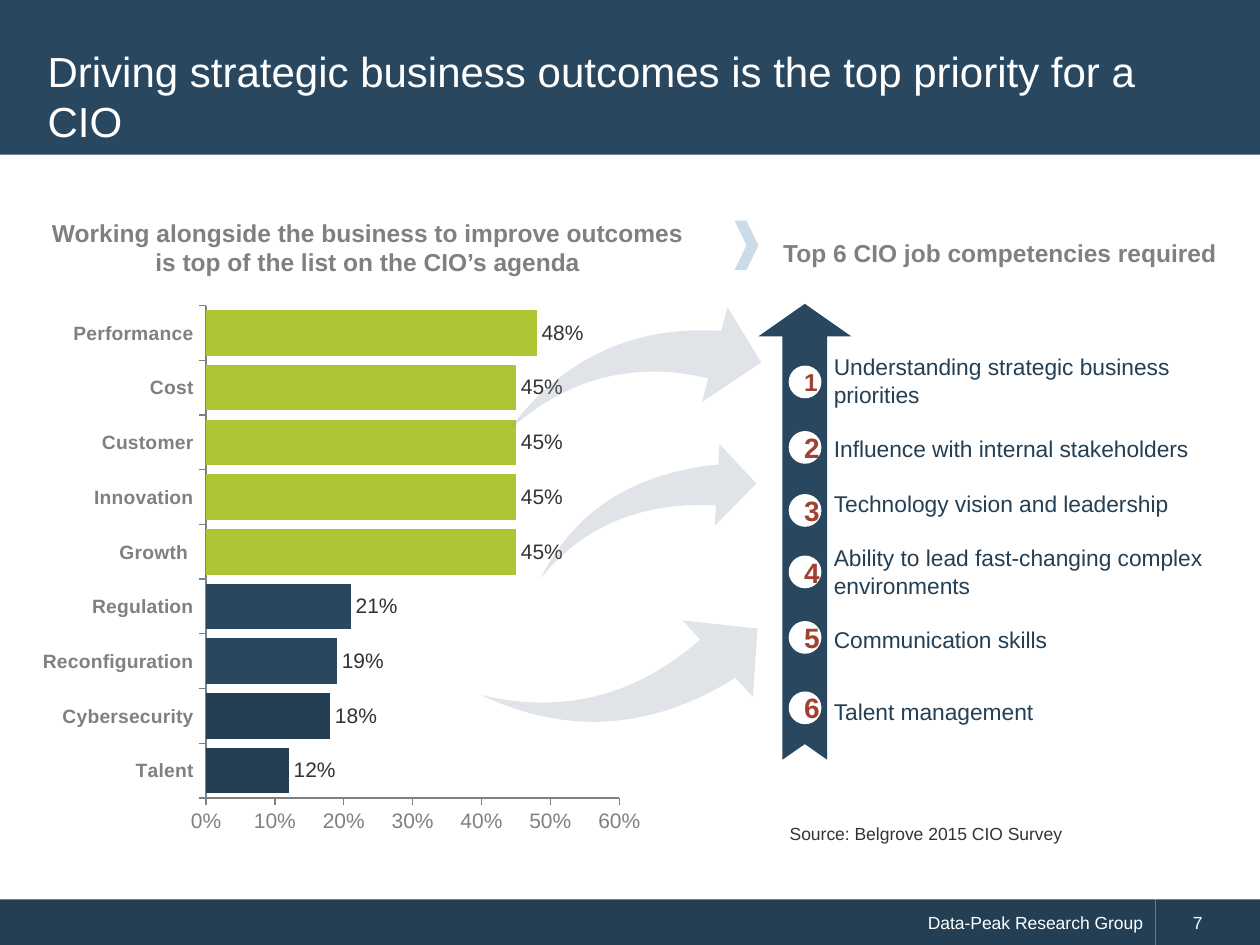
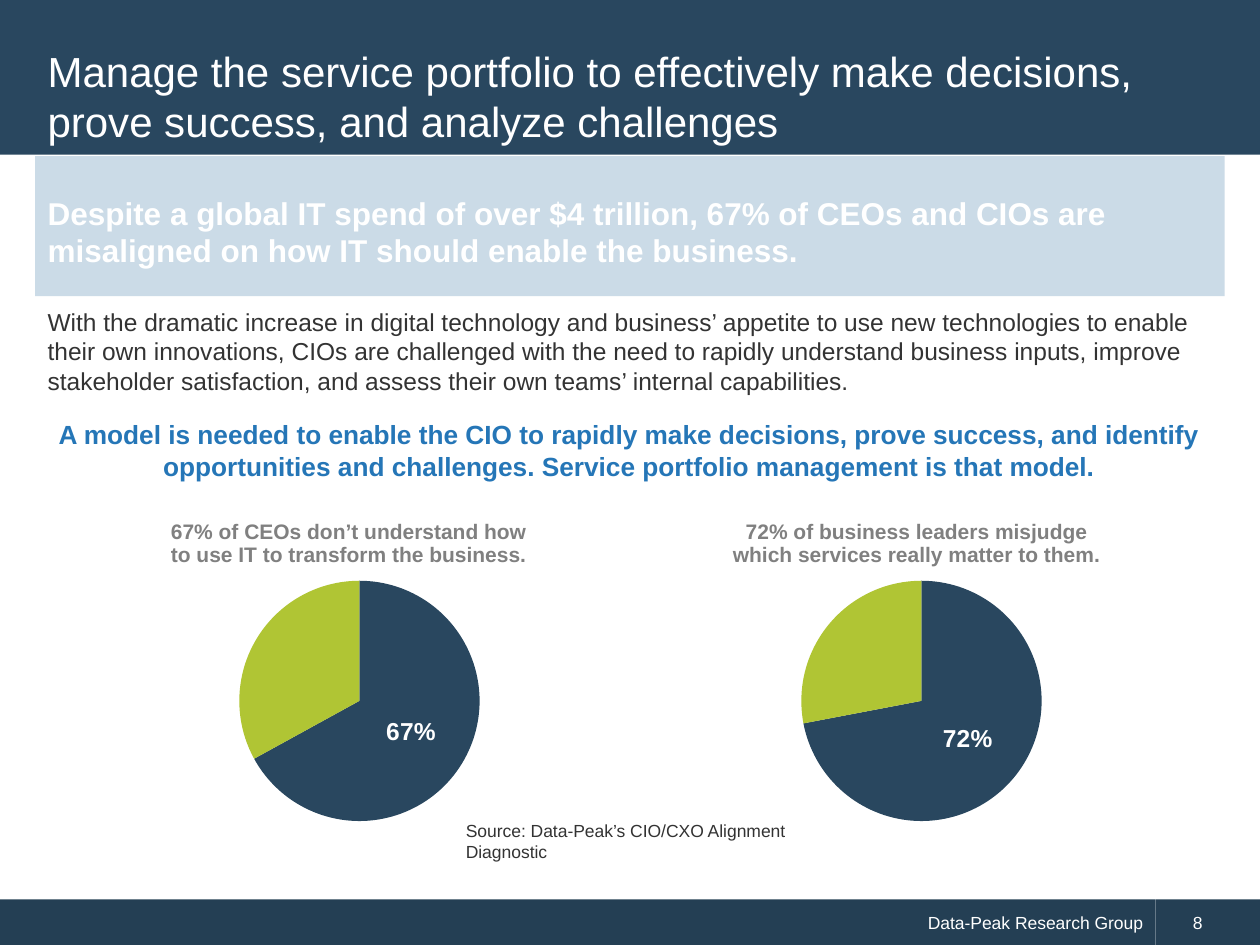
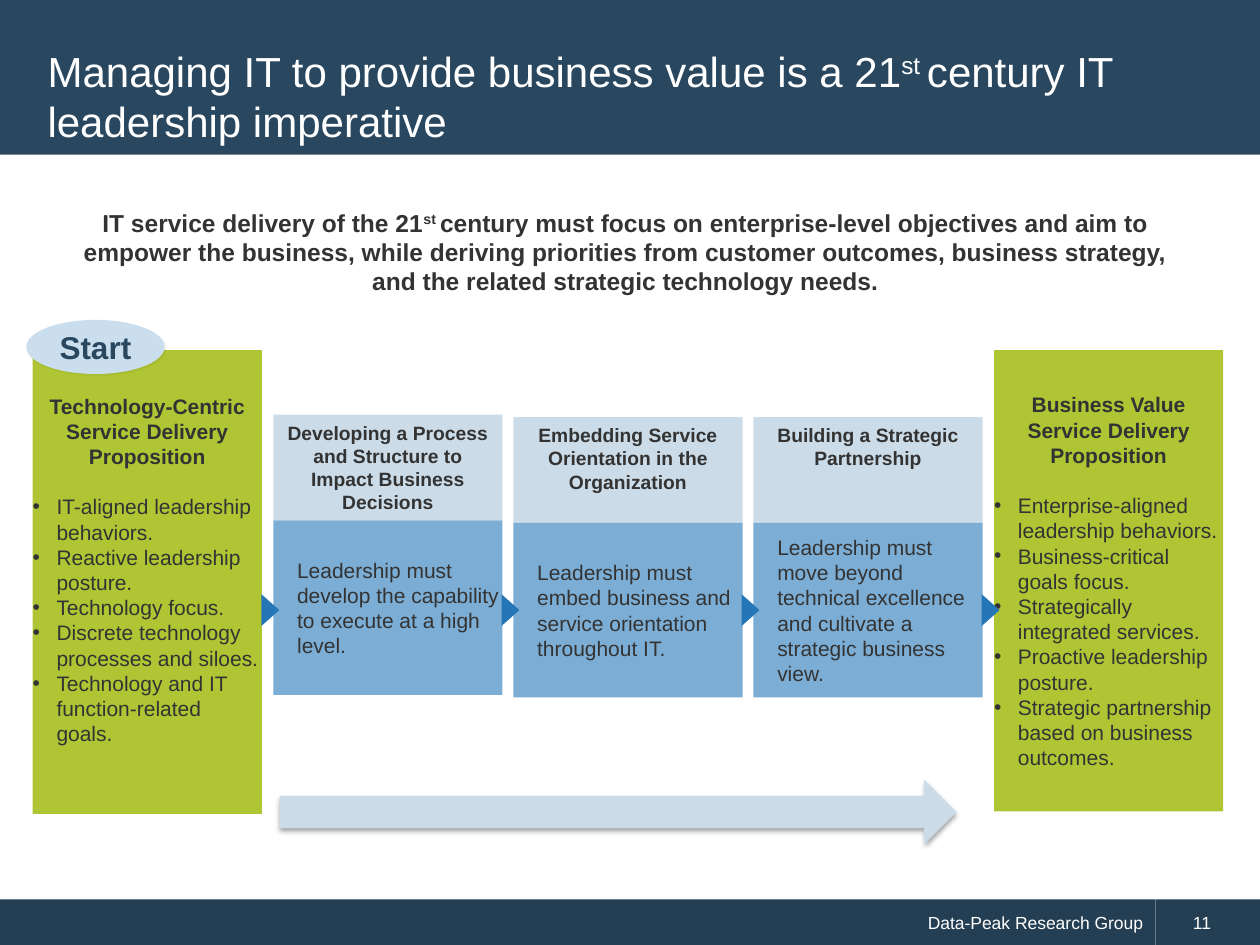
from dataclasses import dataclass, field
from typing import Any, NamedTuple

from lxml.etree import SubElement
from pptx import Presentation
from pptx.chart.data import CategoryChartData
from pptx.dml.color import RGBColor
from pptx.enum.chart import XL_CHART_TYPE, XL_LABEL_POSITION, XL_TICK_MARK
from pptx.enum.shapes import MSO_SHAPE
from pptx.enum.text import MSO_ANCHOR, PP_ALIGN
from pptx.oxml.ns import qn
from pptx.util import Cm, Pt


@dataclass(frozen=True)
class Theme:
    font: str = "Arial"
    band: str = "29475F"
    footer: str = "243F54"
    white: str = "FFFFFF"
    ink: str = "333333"
    grey: str = "808080"
    green: str = "B0C534"
    pale: str = "CBDBE7"
    sky: str = "7CADD4"
    blue: str = "2576B7"
    start: str = "CBDEEE"
    red: str = "A24130"
    swoosh: str = "7F919F"
    title_size: float = 24
    callout_size: float = 18
    number_size: float = 16
    model_size: float = 15
    lead_size: float = 14
    list_size: float = 13
    body_size: float = 12
    label_size: float = 11
    small_size: float = 10


THEME = Theme()


class Box(NamedTuple):
    left: float
    top: float
    width: float
    height: float

    def lengths(self) -> list[Cm]:
        return [Cm(value) for value in self]


class Span(NamedTuple):
    text: str
    raised: bool = False


@dataclass
class Para:
    content: str | list[Span]
    size: float = THEME.body_size
    color: str = THEME.ink
    bold: bool = False
    align: PP_ALIGN = PP_ALIGN.LEFT
    before: float = 0
    indent: float = 0
    bullet: bool = False


@dataclass
class Figure:
    kind: MSO_SHAPE
    box: Box
    fill: str
    paras: list[Para] = field(default_factory=list)
    rotation: float = 0
    adjustments: tuple[float, ...] = ()
    alpha: int = 100
    flipped: bool = False
    shadow: tuple[float, float, float, float] | None = None
    anchor: MSO_ANCHOR = MSO_ANCHOR.MIDDLE
    insets: tuple[float, float] = (0.25, 0.13)
    extra_bottom: float = 0


class Step(NamedTuple):
    top: float
    heading: str
    text: str


class Pie(NamedTuple):
    left: float
    title: str
    share: float


class Proposition(NamedTuple):
    box: Box
    heading: str
    bullets: list[str]
    extra_bottom: float


def assign(target: Any, values: dict[str, Any]) -> None:
    for name, value in values.items():
        setattr(target, name, value)


def style_font(font: Any, size: float, color: str, bold: bool = False) -> None:
    assign(font, {"name": THEME.font, "size": Pt(size), "bold": bold})
    font.color.rgb = RGBColor.from_string(color)


def paint(target: Any, color: str) -> None:
    target.fill.solid()
    target.fill.fore_color.rgb = RGBColor.from_string(color)


def write_text(frame: Any, paras: list[Para]) -> None:
    for index, para in enumerate(paras):
        line = frame.add_paragraph() if index else frame.paragraphs[0]
        assign(line, {"alignment": para.align, "space_before": Pt(para.before)})
        properties = line._p.get_or_add_pPr()
        if para.indent:
            properties.set("marL", str(Cm(para.indent)))
        if para.bullet:
            properties.set("indent", str(-Cm(para.indent)))
            SubElement(properties, qn("a:buFont"), typeface=THEME.font)
            SubElement(properties, qn("a:buChar"), char="•")
        spans = [Span(para.content)] if isinstance(para.content, str) else para.content
        for span in spans:
            run = line.add_run()
            run.text = span.text
            style_font(run.font, para.size, para.color, para.bold)
            if span.raised:
                run._r.get_or_add_rPr().set("baseline", "30000")


def add_text(page: Any, box: Box, paras: list[Para], anchor: MSO_ANCHOR = MSO_ANCHOR.TOP) -> None:
    frame = page.shapes.add_textbox(*box.lengths()).text_frame
    assign(frame, {"word_wrap": True, "vertical_anchor": anchor})
    write_text(frame, paras)


def add_figure(page: Any, figure: Figure) -> None:
    shape = page.shapes.add_shape(figure.kind, *figure.box.lengths())
    shape.shadow.inherit = False
    shape.rotation = figure.rotation
    shape.line.fill.background()
    paint(shape, figure.fill)
    for index, value in enumerate(figure.adjustments):
        shape.adjustments[index] = value
    properties = shape.element.spPr
    if figure.alpha < 100:
        color = properties.find(f"{qn('a:solidFill')}/{qn('a:srgbClr')}")
        SubElement(color, qn("a:alpha"), val=str(figure.alpha * 1000))
    if figure.flipped:
        properties.find(qn("a:xfrm")).set("flipV", "1")
    if figure.shadow:
        opacity, blur, distance, angle = figure.shadow
        effect = SubElement(properties.find(qn("a:effectLst")), qn("a:outerShdw"),
                            blurRad=str(Pt(blur)), dist=str(Pt(distance)),
                            dir=str(int(angle * 60000)), rotWithShape="0")
        color = SubElement(effect, qn("a:srgbClr"), val="000000")
        SubElement(color, qn("a:alpha"), val=str(int(opacity * 1000)))
    if figure.paras:
        side, edge = figure.insets
        frame = shape.text_frame
        assign(frame, {"word_wrap": True, "vertical_anchor": figure.anchor,
                       "margin_left": Cm(side), "margin_right": Cm(side),
                       "margin_top": Cm(edge), "margin_bottom": Cm(edge + figure.extra_bottom)})
        write_text(frame, figure.paras)


def add_page(deck: Any, title: str | list[Span], number: int) -> Any:
    page = deck.slides.add_slide(deck.slide_layouts[6])
    footer = Para("Data-Peak Research Group", THEME.small_size, THEME.white, align=PP_ALIGN.RIGHT)
    page_number = Para(str(number), THEME.small_size, THEME.white, indent=0.51)
    for box, color, paras in (
        (Box(0, 18.13, 23.29, 0.92), THEME.footer, [footer]),
        (Box(23.29, 18.13, 2.11, 0.92), THEME.footer, [page_number]),
        (Box(0, 0, 25.4, 3.12), THEME.band, []),
    ):
        add_figure(page, Figure(MSO_SHAPE.RECTANGLE, box, color, paras))
    add_text(page, Box(0.71, 0.71, 23.95, 2.44),
             [Para(title, THEME.title_size, THEME.white)], MSO_ANCHOR.MIDDLE)
    return page


def heading(text: str) -> Para:
    return Para(text, THEME.lead_size, THEME.grey, True, PP_ALIGN.CENTER)


def source(page: Any, box: Box, text: str) -> None:
    add_text(page, box, [Para(text, THEME.small_size)])


def add_chart(page: Any, kind: XL_CHART_TYPE, box: Box, values: dict[str, float],
              colors: list[str], size: float) -> Any:
    data = CategoryChartData(number_format="0%")
    data.categories = list(values)
    data.add_series("Series 1", list(values.values()))
    chart = page.shapes.add_chart(kind, *box.lengths(), data).chart
    chart.has_legend = False
    style_font(chart.font, size, THEME.ink)
    chart.plots[0].vary_by_categories = False
    for index, color in enumerate(colors):
        paint(chart.plots[0].series[0].points[index].format, color)
    return chart


def place(element: Any, index: int, values: dict[str, Any]) -> None:
    for old in element.findall(qn("c:layout")):
        element.remove(old)
    layout = SubElement(element, qn("c:layout"))
    manual = SubElement(layout, qn("c:manualLayout"))
    for name, value in values.items():
        SubElement(manual, qn(f"c:{name}"), val=str(value))
    element.insert(index, layout)


def add_agenda_chart(page: Any) -> None:
    agenda = {"Talent": 0.12, "Cybersecurity": 0.18, "Reconfiguration": 0.19,
              "Regulation": 0.21, "Growth ": 0.45, "Innovation": 0.45,
              "Customer": 0.45, "Cost": 0.45, "Performance": 0.48}
    colors = [THEME.footer] * 2 + [THEME.band] * 2 + [THEME.green] * 5
    chart = add_chart(page, XL_CHART_TYPE.BAR_CLUSTERED, Box(0.61, 5.94, 12.55, 11.07),
                      agenda, colors, THEME.callout_size)
    chart.has_title = False
    plot = chart.plots[0]
    assign(plot, {"gap_width": 20, "has_data_labels": True})
    assign(plot.data_labels, {"show_value": True, "number_format": "0%",
                              "number_format_is_linked": False,
                              "position": XL_LABEL_POSITION.OUTSIDE_END})
    style_font(plot.data_labels.font, THEME.body_size, THEME.ink)
    for axis, size, bold in ((chart.category_axis, THEME.label_size, True),
                             (chart.value_axis, THEME.body_size, False)):
        assign(axis, {"major_tick_mark": XL_TICK_MARK.OUTSIDE,
                      "minor_tick_mark": XL_TICK_MARK.NONE})
        style_font(axis.tick_labels.font, size, THEME.grey, bold)
        axis.format.line.color.rgb = RGBColor.from_string(THEME.grey)
    assign(chart.value_axis, {"minimum_scale": 0, "maximum_scale": 0.6,
                              "major_unit": 0.1, "has_major_gridlines": True})
    assign(chart.value_axis.tick_labels, {"number_format": "0%", "number_format_is_linked": False})
    grid = chart.value_axis.major_gridlines.format.line
    grid.color.rgb = RGBColor.from_string(THEME.white)
    grid.width = Pt(0.75)


def add_pie(page: Any, pie: Pie) -> None:
    chart = add_chart(page, XL_CHART_TYPE.PIE, Box(pie.left, 10.21, 9.58, 8.81),
                      {"1": pie.share, "2": round(1 - pie.share, 2)},
                      [THEME.band, THEME.green], THEME.small_size)
    chart.has_title = True
    frame = chart.chart_title.text_frame
    frame.text = pie.title
    for para in frame.paragraphs:
        para.alignment = PP_ALIGN.CENTER
        for run in para.runs:
            style_font(run.font, THEME.body_size, THEME.grey, True)
    place(chart.chart_title.element, 1, {"xMode": "edge", "yMode": "edge", "x": 0.1, "y": 0.02})
    place(chart.element.find(f".//{qn('c:plotArea')}"), 0,
          {"layoutTarget": "inner", "xMode": "edge", "yMode": "edge",
           "x": 0.23, "y": 0.17, "w": 0.55, "h": 0.55})
    series = chart.plots[0].series[0]
    label = series.points[0].data_label
    style_font(label.font, THEME.lead_size, THEME.white, True)
    label.position = XL_LABEL_POSITION.CENTER
    series.data_labels.show_value = False


def build_priorities(deck: Any) -> None:
    page = add_page(deck, "Driving strategic business outcomes is the top priority for a CIO", 7)
    add_text(page, Box(0.71, 4.27, 13.41, 1.45), [heading(
        "Working alongside the business to improve outcomes is top of the list on the CIO’s agenda")])
    add_agenda_chart(page)
    for box, rotation, flipped in (
        (Box(10.46, 11.53, 4.67, 4.17), 311, True),
        (Box(10.82, 5.66, 4.24, 3.94), 21.5, False),
        (Box(11.15, 8.74, 3.96, 3.28), 9.8, False),
    ):
        add_figure(page, Figure(MSO_SHAPE.SWOOSH_ARROW, box, THEME.swoosh, rotation=rotation,
                                adjustments=(0.25, 0.25), alpha=24, flipped=flipped))
    add_figure(page, Figure(MSO_SHAPE.NOTCHED_RIGHT_ARROW, Box(11.63, 9.78, 9.19, 1.88),
                            THEME.band, rotation=270, adjustments=(0.48, 0.35)))
    for number, top in enumerate((7.37, 8.69, 9.96, 11.2, 12.52, 13.94), start=1):
        size = THEME.lead_size if number == 1 else THEME.number_size
        add_figure(page, Figure(MSO_SHAPE.OVAL, Box(15.9, top, 0.66, 0.66), THEME.white,
                                [Para(str(number), size, THEME.red, True, PP_ALIGN.CENTER)]))
    competencies = {
        "Understanding strategic business priorities": 0,
        "Influence with internal stakeholders": 15.6,
        "Technology vision and leadership": 15.6,
        "Ability to lead fast-changing complex environments": 15.6,
        "Communication skills": 15.6,
        "Talent management": 25.2,
    }
    add_text(page, Box(16.56, 6.99, 8.36, 8.03),
             [Para(text, THEME.list_size, THEME.footer, before=gap)
              for text, gap in competencies.items()])
    add_text(page, Box(15.37, 4.67, 9.58, 0.86), [heading("Top 6 CIO job competencies required")])
    add_figure(page, Figure(MSO_SHAPE.CHEVRON, Box(14.81, 4.45, 0.48, 0.99), THEME.pale))
    source(page, Box(15.67, 16.46, 8.99, 0.69), "Source: Belgrove 2015 CIO Survey")


def build_portfolio(deck: Any) -> None:
    page = add_page(deck, "Manage the service portfolio to effectively make decisions, "
                          "prove success, and analyze challenges", 8)
    add_figure(page, Figure(MSO_SHAPE.RECTANGLE, Box(0.71, 3.15, 23.98, 2.82), THEME.pale))
    add_text(page, Box(0.71, 3.78, 23.95, 6.12), [
        Para("Despite a global IT spend of over $4 trillion, 67% of CEOs and CIOs are "
             "misaligned on how IT should enable the business.",
             THEME.callout_size, THEME.white, True),
        Para("With the dramatic increase in digital technology and business’ appetite to use "
             "new technologies to enable their own innovations, CIOs are challenged with the "
             "need to rapidly understand business inputs, improve stakeholder satisfaction, "
             "and assess their own teams’ internal capabilities.",
             THEME.lead_size, before=21.6),
        Para("A model is needed to enable the CIO to rapidly make decisions, prove success, and "
             "identify opportunities and challenges. Service portfolio management is that model.",
             THEME.model_size, THEME.blue, True, PP_ALIGN.CENTER, before=13.2),
    ])
    for pie in (
        Pie(2.41, "67% of CEOs don’t understand how\nto use IT to transform the business.", 0.67),
        Pie(13.74, "72% of business leaders misjudge\nwhich services really matter to them.", 0.72),
    ):
        add_pie(page, pie)
    source(page, Box(9.14, 16.41, 8.56, 0.69), "Source: Data-Peak’s CIO/CXO Alignment Diagnostic")


def build_imperative(deck: Any) -> None:
    page = add_page(deck, [Span("Managing IT to provide business value is a 21"), Span("st ", True),
                           Span("century IT leadership imperative")], 11)
    add_text(page, Box(1.37, 4.06, 22.48, 2.06), [Para([
        Span("IT service delivery of the 21"), Span("st ", True),
        Span("century must focus on enterprise-level objectives and aim to empower the business, "
             "while deriving priorities from customer outcomes, business strategy, and the "
             "related strategic technology needs."),
    ], THEME.lead_size, bold=True, align=PP_ALIGN.CENTER)])
    propositions = [
        Proposition(Box(0.66, 7.06, 4.62, 9.35), "Technology-Centric Service Delivery Proposition", [
            "IT-aligned leadership behaviors.", "Reactive leadership posture.",
            "Technology focus.", "Discrete technology processes and siloes.",
            "Technology and IT function-related goals."], 0.51),
        Proposition(Box(20.04, 7.06, 4.62, 9.3), "Business Value Service Delivery Proposition", [
            "Enterprise-aligned leadership behaviors.", "Business-critical goals focus.",
            "Strategically integrated services.", "Proactive leadership posture.",
            "Strategic partnership based on business outcomes."], 0),
    ]
    for proposition in propositions:
        paras = [Para(proposition.heading, bold=True, align=PP_ALIGN.CENTER)]
        paras += [Para(text, before=0 if index else 14.4, indent=0.48, bullet=True)
                  for index, text in enumerate(proposition.bullets)]
        add_figure(page, Figure(MSO_SHAPE.RECTANGLE, proposition.box, THEME.green, paras,
                                insets=(0, 0), extra_bottom=proposition.extra_bottom))
    steps = [
        Step(8.36, "Developing a Process and Structure to Impact Business Decisions",
             "Leadership must develop the capability to execute at a high level."),
        Step(8.41, "Embedding Service Orientation in the Organization",
             "Leadership must embed business and service orientation throughout IT."),
        Step(8.41, "Building a Strategic Partnership",
             "Leadership must move beyond technical excellence and cultivate a strategic "
             "business view."),
    ]
    pitch = 4.84
    for index, step in enumerate(steps):
        left = 5.51 + index * pitch
        add_figure(page, Figure(
            MSO_SHAPE.RECTANGLE, Box(left, step.top, 4.62, 2.13), THEME.pale,
            [Para(step.heading, THEME.label_size, bold=True, align=PP_ALIGN.CENTER)],
            anchor=MSO_ANCHOR.TOP))
        add_figure(page, Figure(MSO_SHAPE.RECTANGLE, Box(left, step.top + 2.13, 4.62, 3.52),
                                THEME.sky, [Para(step.text, indent=0.48)], insets=(0, 0)))
    for index in range(len(steps) + 1):
        add_figure(page, Figure(MSO_SHAPE.ISOSCELES_TRIANGLE,
                                Box(5.13 + index * pitch, 12.12, 0.64, 0.36),
                                THEME.blue, rotation=90))
    add_figure(page, Figure(MSO_SHAPE.OVAL, Box(0.53, 6.45, 2.79, 1.09), THEME.start,
                            [Para("Start", THEME.callout_size, THEME.band, True, PP_ALIGN.CENTER)],
                            shadow=(5, 1, 1, 45)))
    add_figure(page, Figure(MSO_SHAPE.RIGHT_ARROW, Box(5.64, 15.72, 13.64, 1.3), THEME.pale,
                            shadow=(35, 3.1, 1.8, 90)))


def main() -> None:
    deck = Presentation()
    assign(deck, {"slide_width": Cm(25.4), "slide_height": Cm(19.05)})
    for build in (build_priorities, build_portfolio, build_imperative):
        build(deck)
    deck.save("out.pptx")


if __name__ == "__main__":
    main()
